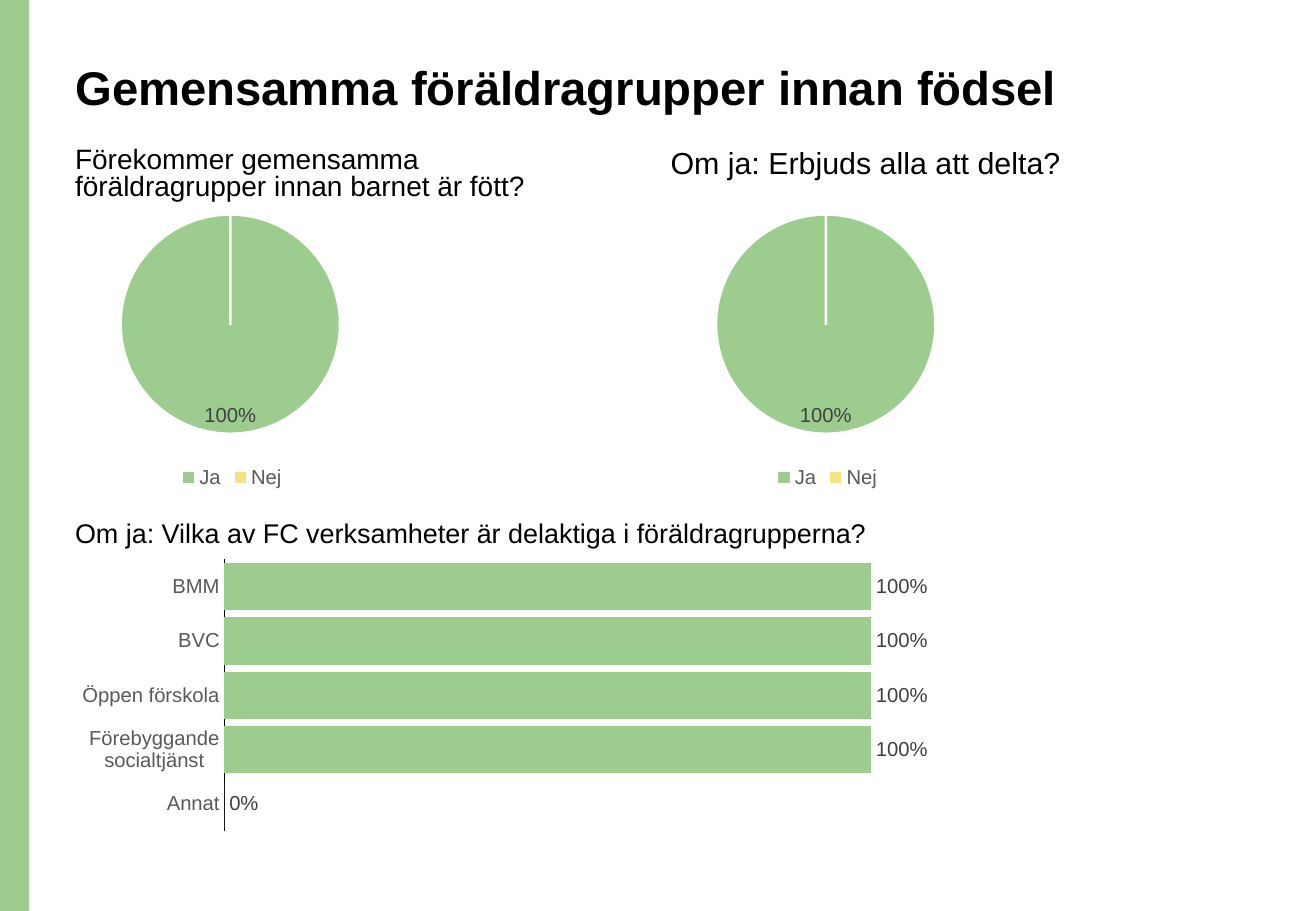
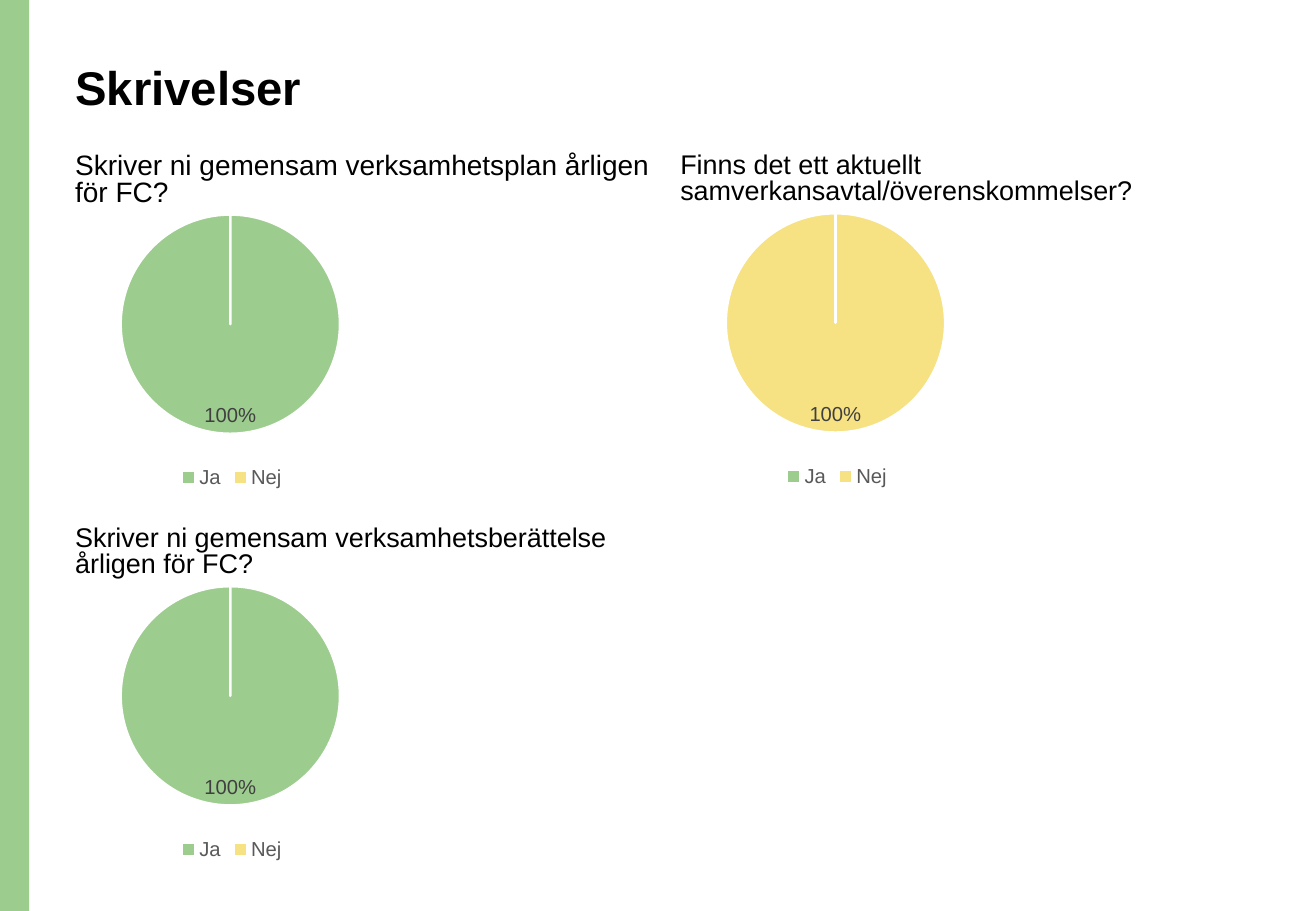
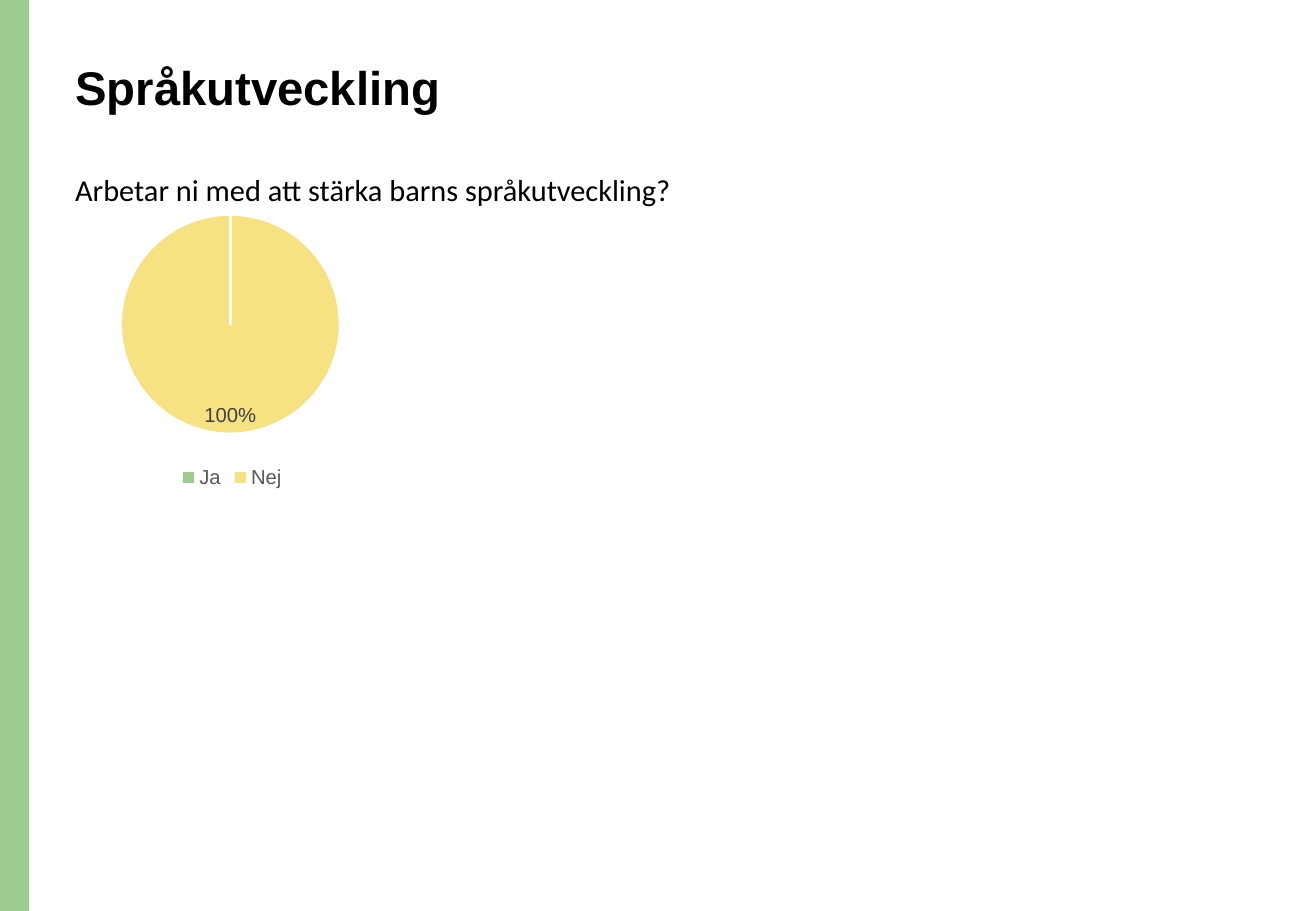
from pptx import Presentation
from pptx.chart.data import CategoryChartData
from pptx.dml.color import RGBColor
from pptx.enum.chart import (XL_CHART_TYPE, XL_LABEL_POSITION,
                             XL_LEGEND_POSITION, XL_TICK_MARK)
from pptx.enum.shapes import MSO_SHAPE
from pptx.enum.text import MSO_ANCHOR, MSO_AUTO_SIZE, PP_ALIGN
from pptx.oxml import parse_xml
from pptx.oxml.ns import nsdecls
from pptx.util import Inches, Pt

PIE, BAR = XL_CHART_TYPE.PIE, XL_CHART_TYPE.BAR_CLUSTERED
IN_END, OUT_END = XL_LABEL_POSITION.INSIDE_END, XL_LABEL_POSITION.OUTSIDE_END
BOTTOM = XL_LEGEND_POSITION.BOTTOM
NO_TICK = XL_TICK_MARK.NONE
RECT = MSO_SHAPE.RECTANGLE
TOP, LEFT = MSO_ANCHOR.TOP, PP_ALIGN.LEFT
NO_FIT = MSO_AUTO_SIZE.NONE

HEX = {"green": "9DCC8F", "yellow": "F6E183", "black": "000000",
       "white": "FFFFFF", "label": "404040", "axis": "595959"}
COLORS = {name: RGBColor.from_string(code) for name, code in HEX.items()}
EDGE = 0.52
PIE_W, PIE_H = 2.78, 2.44
PIE_AREA = {"x": 0.17, "y": 0.06, "w": 0.65, "h": 0.74}
YES, NO = (1, 0), (0, 1)


def write(shape, text, size, gap, face="Arial", bold=False):
    """Fill a title or text box with one left-aligned paragraph."""
    frame = shape.text_frame
    frame.word_wrap = True
    frame.auto_size = NO_FIT
    frame.vertical_anchor = TOP
    para = frame.paragraphs[0]
    para.text = text
    para.alignment = LEFT
    para.line_spacing = gap
    font = para.font
    font.name, font.size, font.bold = face, Pt(size), bold
    font.color.rgb = COLORS["black"]


def add_plot(slide, kind, box, cats, vals, place):
    """Add a chart with percent labels and return it."""
    data = CategoryChartData(number_format="0%")
    data.categories = cats
    data.add_series("Series 1", vals)
    chart = slide.shapes.add_chart(kind, *map(Inches, box), data).chart
    chart.has_title = chart.has_legend = False
    chart.font.name, chart.font.size = "Arial", Pt(10)
    chart.font.color.rgb = COLORS["black"]
    plot = chart.plots[0]
    plot.has_data_labels = True
    tags = plot.data_labels
    tags.show_value = True
    tags.number_format, tags.number_format_is_linked = "0%", False
    tags.position = place
    tags.font.name, tags.font.size = "Arial", Pt(12)
    tags.font.color.rgb = COLORS["label"]
    return chart


# Each question: left, top, width, text, size, line spacing, font, pie top, answer
PAGES = [
    ("Gemensamma föräldragrupper innan födsel", [
        (EDGE, 1.17, 4.13,
         "Förekommer gemensamma föräldragrupper innan barnet är fött?",
         16.6, 0.8, "Arial", 1.62, YES),
        (5.42, 1.17, 4.13, "Om ja: Erbjuds alla att delta?",
         18, 0.9, "Arial", 1.62, YES),
    ]),
    ("Skrivelser", [
        (EDGE, 1.22, 4.98, "Skriver ni gemensam verksamhetsplan årligen för FC?",
         16.6, 0.8, "Arial", 1.62, YES),
        (EDGE, 4.29, 4.89,
         "Skriver ni gemensam verksamhetsberättelse årligen för FC?",
         16, 0.8, "Arial", 4.68, YES),
        (5.5, 1.22, 4.89,
         "Finns det ett aktuellt samverkansavtal/överenskommelser?",
         16, 0.8, "Arial", 1.61, NO),
    ]),
    ("Språkutveckling", [
        (EDGE, 1.34, 7.01, "Arbetar ni med att stärka barns språkutveckling?",
         18, 1.07, "Calibri", 1.62, NO),
    ]),
]

prs = Presentation()
prs.slide_width, prs.slide_height = Inches(10.83), Inches(7.5)
layout = prs.slide_layouts[5]

for title, items in PAGES:
    slide = prs.slides.add_slide(layout)
    head = slide.shapes.title
    head.left, head.top = Inches(EDGE), Inches(0.48)
    head.width, head.height = Inches(9.34), Inches(1.02)
    write(head, title, 28, 0.9, bold=True)

    for left, top, wide, text, size, gap, face, pie_top, vals in items:
        box = slide.shapes.add_textbox(Inches(left), Inches(top),
                                       Inches(wide), Inches(0.57))
        write(box, text, size, gap, face)
        chart = add_plot(slide, PIE, (left, pie_top, PIE_W, PIE_H),
                         ("Ja", "Nej"), vals, IN_END)
        plot = chart.plots[0]
        plot.vary_by_categories = True
        for i, tone in enumerate(("green", "yellow")):
            style = plot.series[0].points[i].format
            style.fill.solid()
            style.fill.fore_color.rgb = COLORS[tone]
            style.line.color.rgb = COLORS["white"]
            style.line.width = Pt(1.5)
        chart.has_legend = True
        legend = chart.legend
        legend.position, legend.include_in_layout = BOTTOM, False
        legend.font.name, legend.font.size = "Arial", Pt(12)
        legend.font.color.rgb = COLORS["axis"]

        # Fix the pie's place inside its chart
        area = chart.element.chart.plotArea
        for old in area.xpath("c:layout"):
            area.remove(old)
        sizes = "".join(f'<c:{k} val="{v}"/>' for k, v in PIE_AREA.items())
        area.insert(0, parse_xml(
            f'<c:layout {nsdecls("c")}><c:manualLayout>'
            '<c:layoutTarget val="inner"/><c:xMode val="edge"/>'
            f'<c:yMode val="edge"/>{sizes}</c:manualLayout></c:layout>'))

# The side band belongs to the layout, so every slide shows it
first = prs.slides[0]
band = first.shapes.add_shape(RECT, 0, 0, Inches(0.24), prs.slide_height)
band.shadow.inherit = False
band.fill.solid()
band.fill.fore_color.rgb = COLORS["green"]
band.line.fill.background()
layout.shapes.element.insert(2, band.element)

# Bar chart on the first slide
chart = add_plot(first, BAR, (EDGE, 4.56, 7.87, 2.33),
                 ("BMM", "BVC", "Öppen förskola",
                  "Förebyggande socialtjänst", "Annat"),
                 (1, 1, 1, 1, 0), OUT_END)
plot = chart.plots[0]
plot.gap_width = 15
plot.vary_by_categories = False
fill = plot.series[0].format.fill
fill.solid()
fill.fore_color.rgb = COLORS["green"]
axis = chart.category_axis
axis.reverse_order = True
axis.has_major_gridlines = False
axis.major_tick_mark = axis.minor_tick_mark = NO_TICK
axis.tick_labels.font.name = "Arial"
axis.tick_labels.font.size = Pt(12)
axis.tick_labels.font.color.rgb = COLORS["axis"]
axis.format.line.color.rgb = COLORS["black"]
axis.format.line.width = Pt(0.75)
scale = chart.value_axis
scale.visible = scale.has_major_gridlines = False
scale.minimum_scale, scale.maximum_scale = 0, 1.2

box = first.shapes.add_textbox(Inches(EDGE), Inches(4.23),
                               Inches(8.13), Inches(0.63))
write(box, "Om ja: Vilka av FC verksamheter är delaktiga i föräldragrupperna?",
      16, 0.9)

prs.save("out.pptx")
